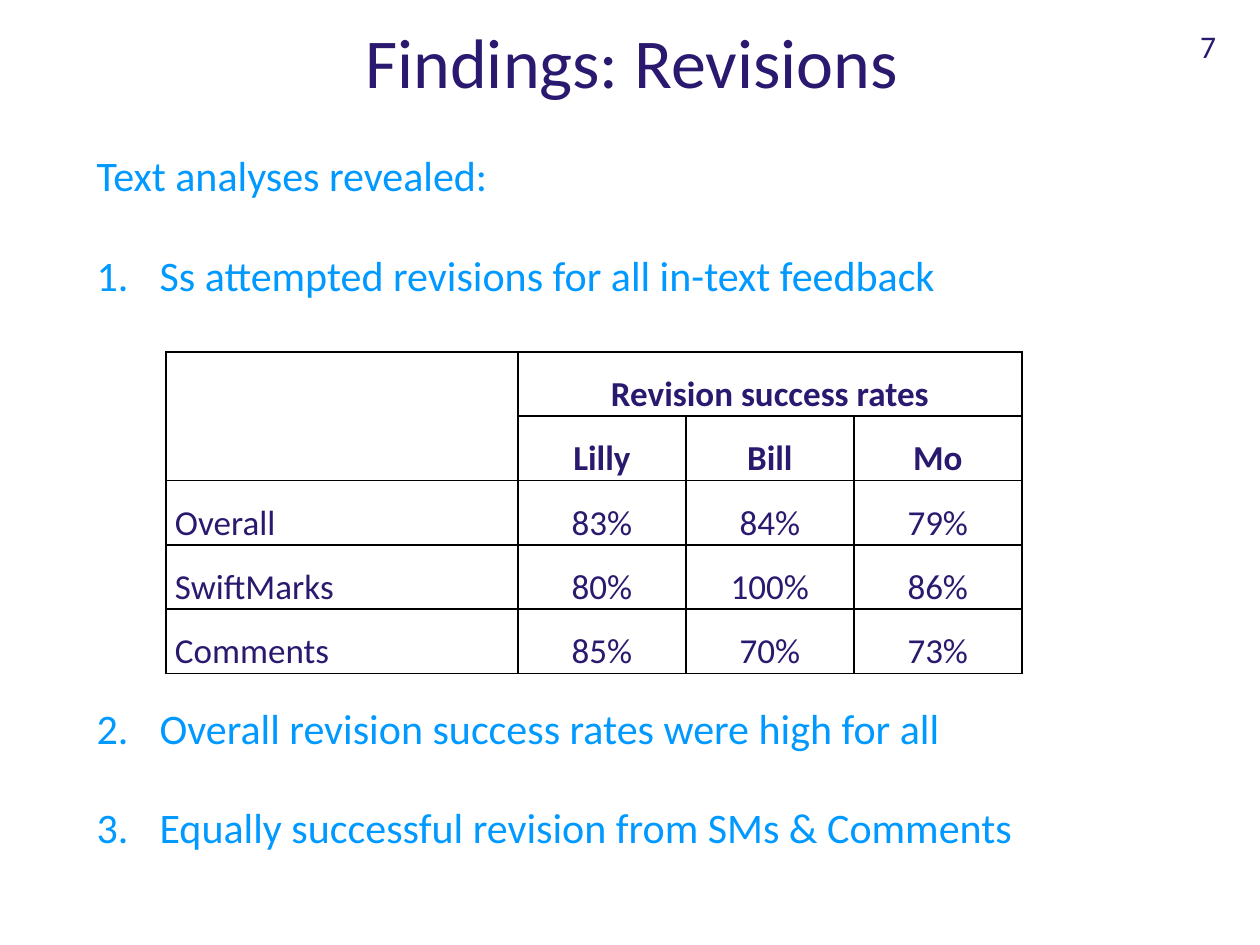
from lxml.etree import SubElement
from pptx import Presentation
from pptx.dml.color import RGBColor
from pptx.enum.text import MSO_ANCHOR as Anchor, MSO_AUTO_SIZE as AutoSize, PP_ALIGN as Align
from pptx.oxml.ns import qn
from pptx.util import Pt

NAVY, SKY, BLACK = "2A196F", "0099FF", "000000"
RATES = [
    ("Overall", "83%", "84%", "79%"),
    ("SwiftMarks", "80%", "100%", "86%"),
    ("Comments", "85%", "70%", "73%"),
]
# Each finding with the gap above it
FINDINGS = [
    ("Ss attempted revisions for all in-text feedback", 28),
    ("Overall revision success rates were high for all", 230),
    ("Equally successful revision from SMs & Comments", 28),
]


def color(hex_value):
    return RGBColor.from_string(hex_value)


def set_attributes(target, values):
    for name, value in values.items():
        setattr(target, name, value)


def write(paragraph, text, size, hex_value, bold=False, **layout):
    paragraph.text = text
    set_attributes(paragraph, layout)
    set_attributes(paragraph.font, {"name": "Calibri", "size": Pt(size), "bold": bold})
    paragraph.font.color.rgb = color(hex_value)


def place(shape, box):
    set_attributes(shape, dict(zip(("left", "top", "width", "height"), map(Pt, box))))
    set_attributes(shape.text_frame, {
        "word_wrap": True, "auto_size": AutoSize.NONE, "vertical_anchor": Anchor.TOP})
    return shape.text_frame.paragraphs[0]


def set_bullet(paragraph, numbered):
    properties = paragraph._p.get_or_add_pPr()
    indent = Pt(36) if numbered else 0
    properties.set("marL", str(indent))
    properties.set("indent", str(-indent))
    if numbered:
        SubElement(properties, qn("a:buFont"), typeface="+mj-lt")
        SubElement(properties, qn("a:buAutoNum"), type="arabicPeriod")
    else:
        SubElement(properties, qn("a:buNone"))


def add_heading(slide, title_box, number_box):
    write(place(slide.shapes.title, title_box), "Findings: Revisions", 40, NAVY,
          alignment=Align.LEFT, line_spacing=0.83)
    page_number = slide.shapes.add_textbox(0, 0, 0, 0)
    write(place(page_number, number_box), "7", 18, NAVY, alignment=Align.RIGHT)


def add_findings(slide, box):
    body = slide.placeholders[1]
    intro = place(body, box)
    set_bullet(intro, numbered=False)
    write(intro, "Text analyses revealed:", 24, SKY, space_before=Pt(0))
    for finding, gap in FINDINGS:
        item = body.text_frame.add_paragraph()
        set_bullet(item, numbered=True)
        write(item, finding, 24, SKY, space_before=Pt(gap))


def add_borders(cell):
    properties = cell._tc.get_or_add_tcPr()
    for position, side in enumerate(("lnL", "lnR", "lnT", "lnB")):
        line = properties.makeelement(qn(f"a:{side}"), {"w": str(Pt(1))})
        fill = SubElement(line, qn("a:solidFill"))
        SubElement(fill, qn("a:srgbClr"), val=BLACK)
        properties.insert(position, line)


def add_rates_table(slide, left, top, widths, row_height):
    rows = [("", "Revision success rates", "", ""), ("", "Lilly", "Bill", "Mo"), *RATES]
    table = slide.shapes.add_table(
        len(rows), len(widths), Pt(left), Pt(top),
        Pt(sum(widths)), Pt(row_height * len(rows))).table
    set_attributes(table, {"first_row": False, "horz_banding": False})
    for column, width in zip(table.columns, widths):
        column.width = Pt(width)
    for r, row in enumerate(rows):
        table.rows[r].height = Pt(row_height)
        for c, text in enumerate(row):
            cell = table.cell(r, c)
            set_attributes(cell, {"margin_left": Pt(5), "margin_right": Pt(5),
                                  "margin_top": 0, "margin_bottom": 0})
            cell.fill.background()
            add_borders(cell)
            if text:
                write(cell.text_frame.paragraphs[0], text, 20, NAVY, bold=r < 2,
                      alignment=Align.CENTER if c else Align.JUSTIFY, line_spacing=1.5)
    # Header spans
    table.cell(0, 0).merge(table.cell(1, 0))
    table.cell(0, 1).merge(table.cell(0, 3))


def main():
    deck = Presentation()
    set_attributes(deck, {"slide_width": Pt(720), "slide_height": Pt(540)})
    slide = deck.slides.add_slide(deck.slide_layouts[1])
    add_heading(slide, (201.6, 15, 476, 57), (552, 12, 150, 36))
    add_findings(slide, (48, 82, 646, 444))
    add_rates_table(slide, 95, 201, (201, 96, 96, 96), 31)
    deck.save("out.pptx")


if __name__ == "__main__":
    main()
